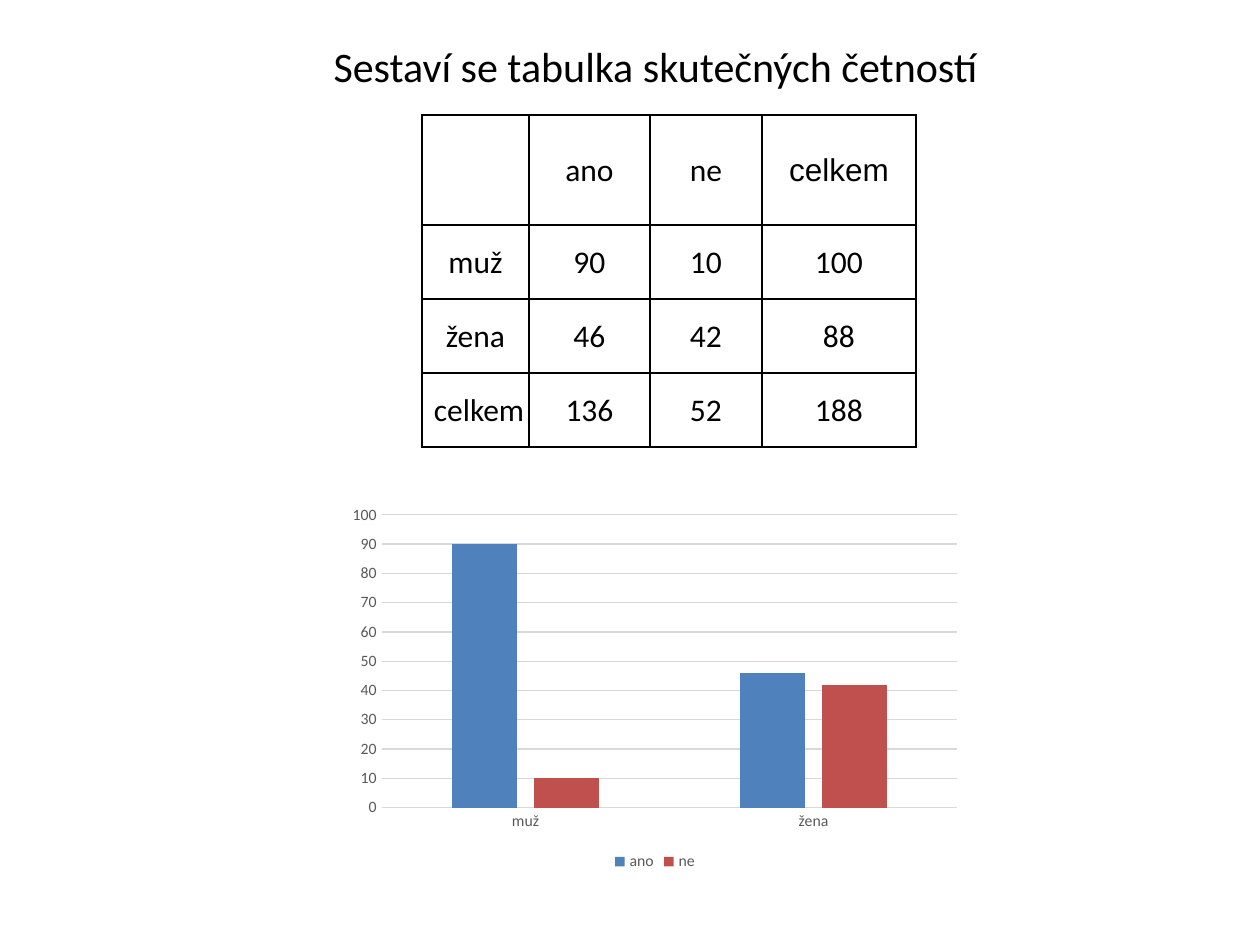
import dataclasses

import lxml.etree
import pptx
import pptx.chart.data
import pptx.dml.color
import pptx.enum.chart
import pptx.enum.text
import pptx.oxml.ns
import pptx.util

SCALE = 914400 / 126
FONT = "Calibri"
BLACK = "000000"
GRAY = "595959"
PALE = "D9D9D9"
COLS = [107, 121, 112, 154]
ROWS = [110, 74, 74, 74]


@dataclasses.dataclass
class Box:
    left: int
    top: int
    width: int
    height: int

    def place(self) -> list[int]:
        return [px(n) for n in (self.left, self.top, self.width, self.height)]


@dataclasses.dataclass
class Cell:
    text: str
    font: str = FONT


@dataclasses.dataclass
class Series:
    name: str
    values: list[int]
    fill: str


GRID = [
    [Cell(""), Cell("ano"), Cell("ne"), Cell("celkem", "Arial")],
    [Cell("muž"), Cell("90"), Cell("10"), Cell("100")],
    [Cell("žena"), Cell("46"), Cell("42"), Cell("88")],
    [Cell(" celkem"), Cell("136"), Cell("52"), Cell("188")],
]
BARS = [
    Series("ano", [90, 46], "4F81BD"),
    Series("ne", [10, 42], "C0504D"),
]


def px(count: int) -> int:
    return round(count * SCALE)


def color(code: str) -> pptx.dml.color.RGBColor:
    return pptx.dml.color.RGBColor.from_string(code)


def style(font, size: int, code: str, name: str = FONT) -> None:
    font.name = name
    font.size = pptx.util.Pt(size)
    font.color.rgb = color(code)


def write(frame, text: str, size: int, name: str = FONT) -> None:
    para = frame.paragraphs[0]
    para.alignment = pptx.enum.text.PP_ALIGN.CENTER
    run = para.add_run()
    run.text = text
    style(run.font, size, BLACK, name)


def border(cell) -> None:
    props = cell._tc.get_or_add_tcPr()
    qn = pptx.oxml.ns.qn
    for side in "LRTB":
        line = lxml.etree.SubElement(props, qn(f"a:ln{side}"), w="12700")
        fill = lxml.etree.SubElement(line, qn("a:solidFill"))
        lxml.etree.SubElement(fill, qn("a:srgbClr"), val=BLACK)


def title(slide, box: Box, text: str) -> None:
    shape = slide.shapes.title
    shape.left, shape.top, shape.width, shape.height = box.place()
    shape.text_frame.word_wrap = True
    write(shape.text_frame, text, 24)


def table(slide, box: Box) -> None:
    grid = slide.shapes.add_table(len(ROWS), len(COLS), *box.place()).table
    grid.first_row = False
    grid.horz_banding = False
    for col, width in zip(grid.columns, COLS):
        col.width = px(width)
    for row, height, items in zip(grid.rows, ROWS, GRID):
        row.height = px(height)
        for cell, item in zip(row.cells, items):
            border(cell)
            cell.fill.background()
            cell.margin_left = cell.margin_right = cell.margin_top = px(1)
            cell.margin_bottom = 0
            cell.vertical_anchor = pptx.enum.text.MSO_ANCHOR.MIDDLE
            if item.text:
                write(cell.text_frame, item.text, 18, item.font)


def rule(line) -> None:
    line.color.rgb = color(PALE)
    line.width = pptx.util.Pt(0.75)


def chart(slide, box: Box) -> None:
    kinds = pptx.enum.chart
    data = pptx.chart.data.CategoryChartData()
    data.categories = ["muž", "žena"]
    for item in BARS:
        data.add_series(item.name, item.values)
    graph = slide.shapes.add_chart(
        kinds.XL_CHART_TYPE.COLUMN_CLUSTERED, *box.place(), data
    ).chart
    style(graph.font, 10, BLACK)
    graph.has_title = False
    graph.has_legend = True
    graph.legend.position = kinds.XL_LEGEND_POSITION.BOTTOM
    graph.legend.include_in_layout = False
    style(graph.legend.font, 9, GRAY)

    plot = graph.plots[0]
    plot.gap_width = 219
    plot.overlap = -27
    plot.vary_by_categories = False
    for bar, item in zip(plot.series, BARS):
        bar.format.fill.solid()
        bar.format.fill.fore_color.rgb = color(item.fill)
        bar.invert_if_negative = False

    for axis in (graph.category_axis, graph.value_axis):
        axis.major_tick_mark = kinds.XL_TICK_MARK.NONE
        axis.minor_tick_mark = kinds.XL_TICK_MARK.NONE
        style(axis.tick_labels.font, 9, GRAY)
    rule(graph.category_axis.format.line)
    scale = graph.value_axis
    scale.minimum_scale, scale.maximum_scale, scale.major_unit = 0, 100, 10
    scale.format.line.fill.background()
    scale.has_major_gridlines = True
    rule(scale.major_gridlines.format.line)


def main() -> None:
    deck = pptx.Presentation()
    deck.slide_width, deck.slide_height = px(1260), px(945)
    slide = deck.slides.add_slide(deck.slide_layouts[5])
    table(slide, Box(422, 115, sum(COLS), sum(ROWS)))
    title(slide, Box(55, 34, 1201, 63), "Sestaví se tabulka skutečných četností")
    chart(slide, Box(340, 498, 630, 378))
    deck.save("out.pptx")


if __name__ == "__main__":
    main()
